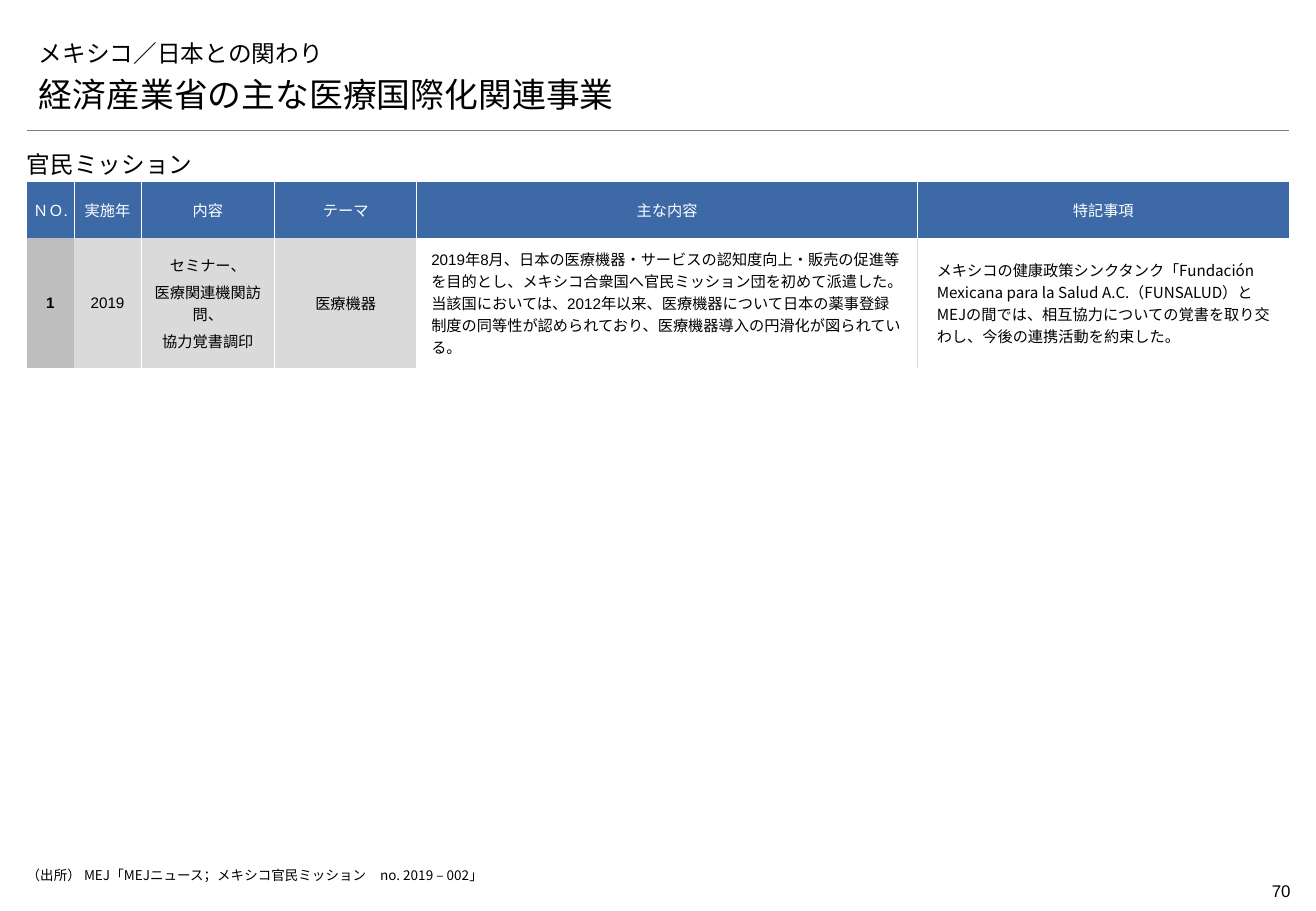
from lxml import etree
from pptx import Presentation
from pptx.dml.color import RGBColor
from pptx.enum.shapes import MSO_CONNECTOR
from pptx.enum.text import MSO_ANCHOR, MSO_AUTO_SIZE, PP_ALIGN
from pptx.oxml.ns import qn
from pptx.util import Inches, Pt

LEFT, CENTER, RIGHT = PP_ALIGN.LEFT, PP_ALIGN.CENTER, PP_ALIGN.RIGHT
TOP, MIDDLE, BOTTOM = MSO_ANCHOR.TOP, MSO_ANCHOR.MIDDLE, MSO_ANCHOR.BOTTOM

THEME = {
    "heading": "Montserrat", "latin": "Arial", "japanese": "Noto Sans CJK JP",
    "black": "000000", "white": "FFFFFF", "rule": "7F7F7F", "blue": "3D6AA7",
    "dark": "BEBEBE", "light": "DADADA",
    "title": 20, "subtitle": 14, "number": 10, "cell": 9, "source": 8,
}
MARGIN, CONTENT = 0.22, 10.39


def set_frame(frame, anchor, insets):
    """Insets run left, top, right, bottom in inches."""
    frame.word_wrap = True
    frame.auto_size = MSO_AUTO_SIZE.NONE
    frame.vertical_anchor = anchor
    (frame.margin_left, frame.margin_top,
     frame.margin_right, frame.margin_bottom) = map(Inches, insets)


def write(para, words, font, size, color="black", align=LEFT, bold=False):
    para.alignment = align
    span = para.add_run()
    span.text = words
    span.font.name = THEME[font]
    span.font.size = Pt(THEME[size])
    span.font.bold = bold
    span.font.color.rgb = RGBColor.from_string(THEME[color])
    east = etree.SubElement(span.font._element, qn("a:ea"))
    east.set("typeface", THEME["japanese"])


deck = Presentation()
deck.slide_width, deck.slide_height = Inches(10.83), Inches(7.5)
page = deck.slides.add_slide(deck.slide_layouts[1])

# Title and body placeholders
headings = [
    (page.shapes.title, 0.21, "メキシコ／日本との関わり", "subtitle"),
    (page.placeholders[1], 0.6, "経済産業省の主な医療国際化関連事業", "title"),
]
for holder, top, words, size in headings:
    holder.left, holder.top = Inches(MARGIN), Inches(top)
    holder.width, holder.height = Inches(CONTENT), Inches(0.39)
    set_frame(holder.text_frame, BOTTOM, (0.1, 0.05, 0.1, 0.05))
    para = holder.text_frame.paragraphs[0]
    properties = para._p.get_or_add_pPr()
    properties.set("marL", "0")
    properties.set("indent", "0")
    etree.SubElement(properties, qn("a:buNone"))
    para.space_before = Pt(0)
    write(para, words, "heading", size)

# Rule under the headings
rule = page.shapes.add_connector(
    MSO_CONNECTOR.STRAIGHT, Inches(MARGIN), Inches(1.07),
    Inches(MARGIN + CONTENT), Inches(1.07))
rule.line.color.rgb = RGBColor.from_string(THEME["rule"])
rule.line.width = Pt(0.25)
etree.SubElement(rule._element.spPr, qn("a:effectLst"))

# Section heading, source line and page number
notes = [
    ((MARGIN, 1.16, CONTENT, 0.39), BOTTOM, (0, 0.05, 0, 0.08), LEFT, "subtitle",
     [("官民ミッション", "heading")]),
    ((MARGIN, 7.14, 10, 0.16), TOP, (0, 0, 0, 0), LEFT, "source",
     [("（出所） ", "latin"),
      ("MEJ「MEJニュース；メキシコ官民ミッション　no. 2019 – 002」", "japanese")]),
    ((9.83, 7.2, 0.79, 0.27), TOP, (0, 0.05, 0, 0.05), RIGHT, "number",
     [("70", "latin")]),
]
for place, anchor, insets, align, size, spans in notes:
    box = page.shapes.add_textbox(*map(Inches, place))
    set_frame(box.text_frame, anchor, insets)
    for words, font in spans:
        write(box.text_frame.paragraphs[0], words, font, size, align=align)

# Mission table: heading, width, body paragraphs, fill, side and top inset, edge to the right
columns = [
    ("ＮＯ.", 0.39, ["1"], "dark", 0.04, 0.03, None),
    ("実施年", 0.55, ["2019"], "light", 0.04, 0.03, "white"),
    ("内容", 1.1, ["セミナー、", "医療関連機関訪問、", "協力覚書調印"],
     "light", 0.08, 0.03, "white"),
    ("テーマ", 1.17, ["医療機器"], "light", 0.08, 0.03, "white"),
    ("主な内容", 4.12,
     ["2019年8月、日本の医療機器・サービスの認知度向上・販売の促進等を目的とし、"
      "メキシコ合衆国へ官民ミッション団を初めて派遣した。当該国においては、"
      "2012年以来、医療機器について日本の薬事登録制度の同等性が認められており、"
      "医療機器導入の円滑化が図られている。"], "white", 0.12, 0.08, "light"),
    ("特記事項", 3.06,
     ["メキシコの健康政策シンクタンク「Fundación Mexicana para la Salud A.C."
      "（FUNSALUD）とMEJの間では、相互協力についての覚書を取り交わし、"
      "今後の連携活動を約束した。"], "white", 0.16, 0.08, None),
]
last = len(columns) - 1
row_heights = (0.46, 1.06)
table = page.shapes.add_table(
    2, len(columns), Inches(MARGIN), Inches(1.5),
    Inches(CONTENT), Inches(sum(row_heights))).table
table.first_row = table.horz_banding = False
for row, height in zip(table.rows, row_heights):
    row.height = Inches(height)

for number, (heading, width, body, fill, side, top, edge) in enumerate(columns):
    table.columns[number].width = Inches(width)
    edge_before = columns[number - 1][6] if number else None
    header_edges = ("white" if number else None, "white" if number < last else None)
    body_font = "japanese" if number == last else "latin"
    body_align = LEFT if fill == "white" else CENTER
    cells = [
        ([heading], "blue", 0.04, 0.05, header_edges, "japanese", "white", CENTER, False),
        (body, fill, side, top, (edge_before, edge), body_font, "black", body_align,
         number == 0),
    ]
    for row, (texts, back, inset_x, inset_y, edges, font, ink, align, bold) in enumerate(cells):
        cell = table.cell(row, number)
        cell.vertical_anchor = MIDDLE
        cell.margin_left = cell.margin_right = Inches(inset_x)
        cell.margin_top = cell.margin_bottom = Inches(inset_y)

        # Cell borders come before the fill
        for tag, color in zip(("a:lnL", "a:lnR", "a:lnT", "a:lnB"), (*edges, None, None)):
            line = etree.SubElement(cell._tc.get_or_add_tcPr(), qn(tag))
            if color:
                line.set("w", str(Pt(0.5)))
                solid = etree.SubElement(line, qn("a:solidFill"))
                etree.SubElement(solid, qn("a:srgbClr")).set("val", THEME[color])
            else:
                etree.SubElement(line, qn("a:noFill"))
        cell.fill.solid()
        cell.fill.fore_color.rgb = RGBColor.from_string(THEME[back])

        for order, words in enumerate(texts):
            frame = cell.text_frame
            para = frame.add_paragraph() if order else frame.paragraphs[0]
            para.space_before = Pt(3 if order else 0)
            write(para, words, font, "cell", ink, align, bold)

deck.save("out.pptx")
